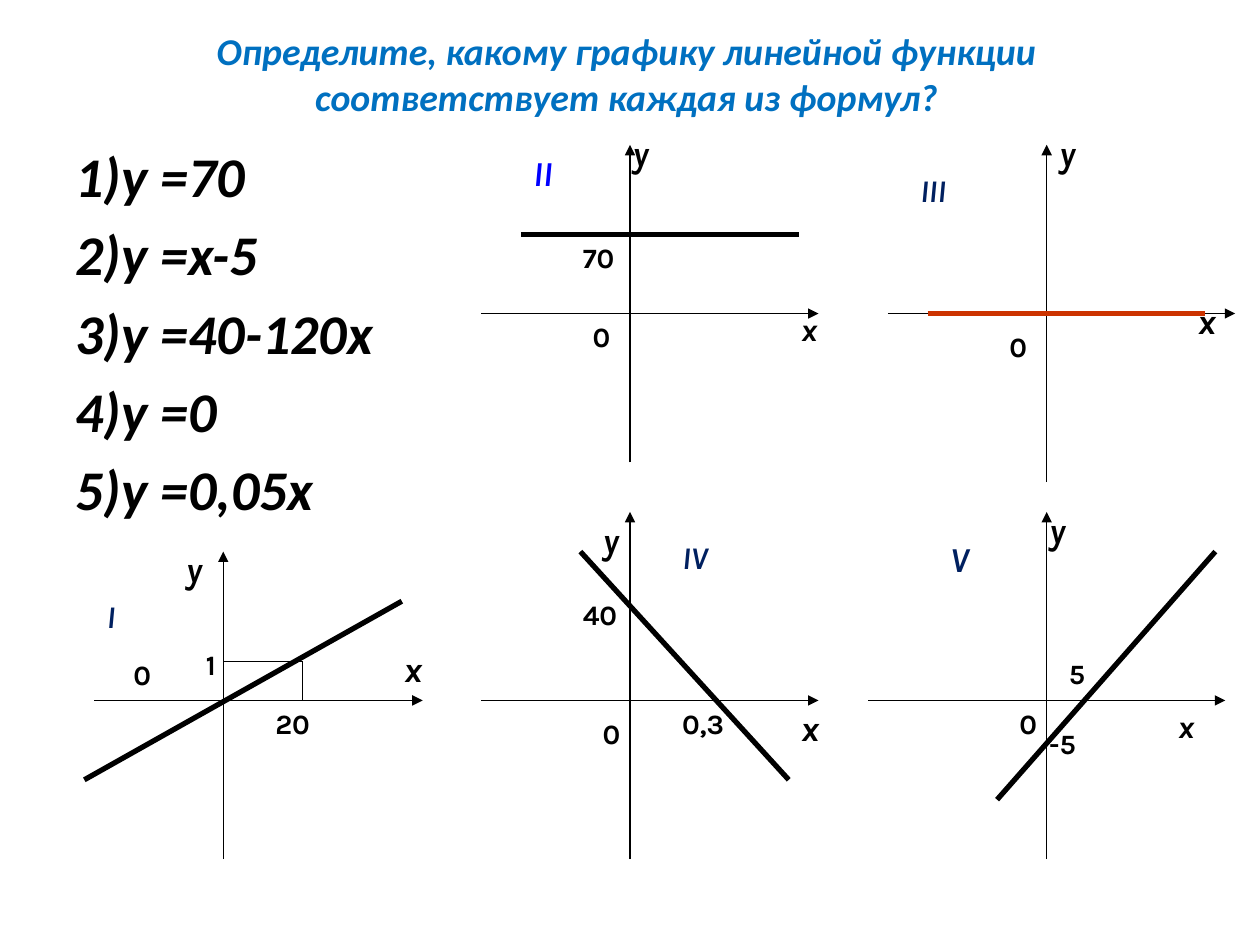
"""Build a slide that matches linear function formulas with their graphs."""
from dataclasses import dataclass

from lxml import etree
from pptx import Presentation
from pptx.dml.color import RGBColor
from pptx.enum.shapes import MSO_CONNECTOR
from pptx.enum.text import MSO_ANCHOR, PP_ALIGN
from pptx.oxml.ns import qn
from pptx.util import Cm, Pt

STRAIGHT = MSO_CONNECTOR.STRAIGHT
MIDDLE, TOP = MSO_ANCHOR.MIDDLE, MSO_ANCHOR.TOP
CENTER = PP_ALIGN.CENTER
BLACK, NAVY, BLUE, RED, TITLE_BLUE = "000000", "002060", "0000FF", "CC3300", "0070C0"
THIN, THICK = 0.75, 3
HEIGHTS = {16: 0.94, 18: 1.02, 20: 1.09}


@dataclass
class Label:
    """Text with its place and width in centimetres."""
    text: str
    x: float
    y: float
    w: float
    size: int = 16
    color: str = BLACK
    italic: bool = False


@dataclass
class Line:
    """Straight line with its ends in centimetres."""
    x1: float
    y1: float
    x2: float
    y2: float
    width: float = THICK
    color: str = BLACK
    arrow: bool = False


@dataclass
class Graph:
    """Coordinate axes with the lines and labels on them."""
    origin: tuple[float, float]
    x_range: tuple[float, float]
    y_range: tuple[float, float]
    lines: list[Line]
    labels: list[Label]


def name(text: str, x: float, y: float, w: float, size: int = 18, color: str = NAVY) -> Label:
    """Return the italic label of a graph."""
    return Label(text, x, y, w, size, color, True)


def axis(text: str, x: float, y: float, w: float, size: int = 20) -> Label:
    """Return the italic label of an axis."""
    return Label(text, x, y, w, size, BLACK, True)


TITLE = "Определите, какому графику линейной функции\vсоответствует каждая из формул?"
FORMULAS = ["1)у =70", "2)у =x-5", "3)у =40-120x", "4)у =0", "5)у =0,05x"]
GRAPHS = [
    Graph((4.5, 14.12), (1.9, 8.52), (11.12, 17.32),
          [Line(1.7, 15.72, 8.1, 12.12),
           Line(6.1, 13.33, 6.1, 14.12, THIN),
           Line(6.1, 13.33, 4.5, 13.33, THIN)],
          [name("I", 1.9, 11.92, 0.8),
           axis("x", 7.9, 12.92, 1.6), axis("y", 3.5, 10.92, 1),
           Label("20", 5.3, 14.12, 1.6), Label("1", 3.9, 12.92, 1.8),
           Label("0", 2.44, 13.13, 1.4)]),
    Graph((12.7, 6.32), (9.7, 16.5), (2.92, 9.32),
          [Line(10.5, 4.72, 16.1, 4.72)],
          [name("II", 10.5, 2.92, 1.4, 20, BLUE),
           axis("x", 15.9, 6.12, 1, 18), axis("y", 12.5, 2.52, 1),
           Label("0", 11.7, 6.32, 1), Label("70", 11.5, 4.72, 2.2)]),
    Graph((21.1, 6.32), (17.9, 24.9), (2.92, 9.72),
          [Line(18.7, 6.32, 24.3, 6.32, color=RED)],
          [name("III", 18.3, 3.32, 1.6),
           axis("x", 23.9, 5.92, 1.2), axis("y", 21.1, 2.52, 1.6),
           Label("0", 20.1, 6.52, 1.2)]),
    Graph((12.7, 14.12), (9.7, 16.5), (10.32, 17.32),
          [Line(11.7, 11.12, 15.9, 15.72)],
          [name("IV", 13.5, 10.72, 1.9),
           axis("x", 15.9, 14.12, 1), axis("y", 11.9, 10.32, 1),
           Label("0", 11.9, 14.32, 1), Label("40", 11.5, 11.92, 2),
           Label("0,3", 13.5, 14.12, 1.6)]),
    Graph((21.1, 14.12), (17.5, 24.7), (10.32, 17.32),
          [Line(20.1, 16.12, 24.5, 11.12)],
          [name("V", 18.9, 10.72, 1.2, 20),
           axis("x", 23.5, 14.12, 1.9, 18), axis("y", 20.9, 10.12, 1.4),
           Label("0", 20.3, 14.12, 1), Label("5", 21.3, 13.12, 0.8),
           Label("-5", 20.9, 14.52, 1.6)]),
]


def rgb(color: str) -> RGBColor:
    """Turn a hex string into a colour."""
    return RGBColor.from_string(color)


def style(p, font: str, size: float, color: str, italic: bool) -> None:
    """Set the bold font of a paragraph."""
    p.font.name, p.font.size = font, Pt(size)
    p.font.bold, p.font.italic = True, italic
    p.font.color.rgb = rgb(color)


def place(sp, x: float, y: float, w: float, h: float) -> None:
    """Move and size a shape."""
    sp.left, sp.top, sp.width, sp.height = Cm(x), Cm(y), Cm(w), Cm(h)


def draw_line(s, line: Line) -> None:
    """Draw a line without shadow, with an arrowhead if asked."""
    sp = s.shapes.add_connector(STRAIGHT, Cm(line.x1), Cm(line.y1), Cm(line.x2), Cm(line.y2))
    sp.line.width = Pt(line.width)
    sp.line.color.rgb = rgb(line.color)
    if line.arrow:
        etree.SubElement(sp.line._get_or_add_ln(), qn("a:tailEnd"), type="triangle")
    etree.SubElement(sp._element.spPr, qn("a:effectLst"))


def draw_label(s, label: Label) -> None:
    """Draw a label as a text box."""
    sp = s.shapes.add_textbox(Cm(label.x), Cm(label.y), Cm(label.w), Cm(HEIGHTS[label.size]))
    tf = sp.text_frame
    tf.word_wrap = True
    tf.text = label.text
    style(tf.paragraphs[0], "Karla", label.size, label.color, label.italic)


def draw_graph(s, graph: Graph) -> None:
    """Draw the axes, then the lines and labels of a graph."""
    x, y = graph.origin
    left, right = graph.x_range
    top, bottom = graph.y_range
    axes = [Line(x, bottom, x, top, THIN, arrow=True),
            Line(left, y, right, y, THIN, arrow=True)]
    for line in axes + graph.lines:
        draw_line(s, line)
    for label in graph.labels:
        draw_label(s, label)


def fill_title(sp) -> None:
    """Write the centred title."""
    place(sp, 1.2, 0.8, 22.86, 1.36)
    tf = sp.text_frame
    tf.text = TITLE
    tf.vertical_anchor = MIDDLE
    p = tf.paragraphs[0]
    p.alignment = CENTER
    style(p, "Calibri", 21.6, TITLE_BLUE, True)


def fill_formulas(sp) -> None:
    """Write the formulas as a list without bullets."""
    place(sp, 1.27, 2.72, 22.86, 15.4)
    tf = sp.text_frame
    tf.text = "\n".join(FORMULAS)
    tf.vertical_anchor = TOP
    for p in tf.paragraphs:
        style(p, "Calibri", 32, BLACK, True)
        pPr = p._p.get_or_add_pPr()
        pPr.set("marL", str(Cm(0.95)))
        pPr.set("indent", str(-Cm(0.95)))
        pPr.insert(0, etree.Element(qn("a:buNone")))


def main() -> None:
    """Build and save the slide."""
    prs = Presentation()
    prs.slide_width, prs.slide_height = Cm(25.4), Cm(19.05)
    s = prs.slides.add_slide(prs.slide_layouts[1])
    fill_title(s.shapes.title)
    fill_formulas(s.placeholders[1])
    for graph in GRAPHS:
        draw_graph(s, graph)
    prs.save("out.pptx")


if __name__ == "__main__":
    main()
